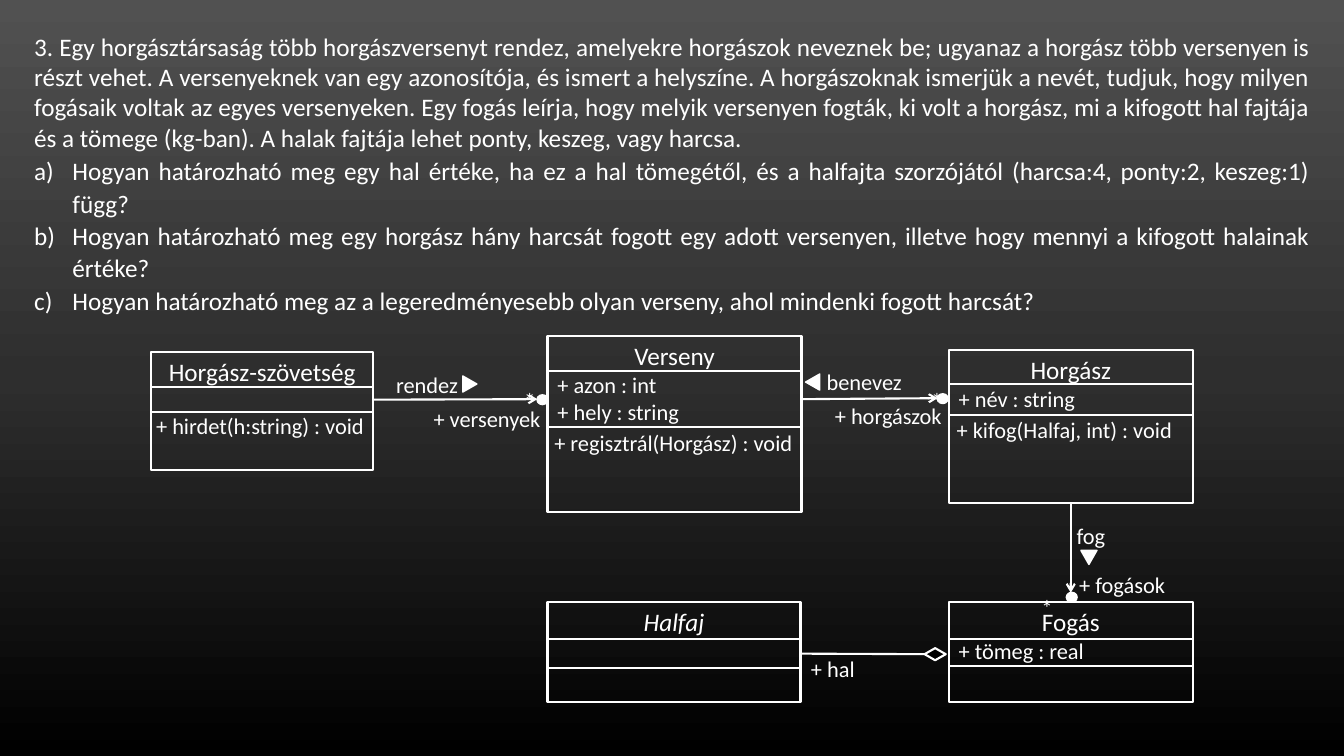
import copy

import pptx
import pptx.dml.color
import pptx.enum.shapes
import pptx.enum.text
import pptx.oxml.ns
import pptx.util
from pptx.util import Inches, Pt

WHITE, BLACK = "FFFFFF", "000000"
FONT = "Calibri"
BACKGROUND = [(0, "515151"), (0.5, "2E2E2E"), (1, BLACK)]

TASK = (
    "3. Egy horgásztársaság több horgászversenyt rendez, amelyekre horgászok neveznek be; "
    "ugyanaz a horgász több versenyen is részt vehet. A versenyeknek van egy azonosítója, és "
    "ismert a helyszíne. A horgászoknak ismerjük a nevét, tudjuk, hogy milyen fogásaik voltak "
    "az egyes versenyeken. Egy fogás leírja, hogy melyik versenyen fogták, ki volt a horgász, "
    "mi a kifogott hal fajtája és a tömege (kg-ban). A halak fajtája lehet ponty, keszeg, vagy "
    "harcsa."
)
QUESTIONS = [
    "Hogyan határozható meg egy hal értéke, ha ez a hal tömegétől, és a halfajta szorzójától "
    "(harcsa:4, ponty:2, keszeg:1) függ?",
    "Hogyan határozható meg egy horgász hány harcsát fogott egy adott versenyen, illetve hogy "
    "mennyi a kifogott halainak értéke?",
    "Hogyan határozható meg az a legeredményesebb olyan verseny, ahol mindenki fogott harcsát?",
]

# name: (left, top, width, height), (attribute top, attribute height), attributes
CLASSES = {
    "Horgász-szövetség": ((1.5, 3.49, 2.2, 1.17), (3.84, 0.25), []),
    "Verseny": ((5.43, 3.33, 2.52, 1.75), (3.68, 0.56), ["+ azon : int", "+ hely : string"]),
    "Horgász": ((9.41, 3.47, 2.42, 1.52), (3.81, 0.31), ["+ név : string"]),
    "Fogás": ((9.41, 5.97, 2.42, 0.99), (6.34, 0.27), ["+ tömeg : real"]),
    "Halfaj": ((5.43, 5.97, 2.51, 0.99), (6.34, 0.29), []),
}
ABSTRACT = {"Halfaj"}

# class, joined part (0 whole box, 1 attributes), side, end point, arrowhead
LINKS = [
    ("Horgász-szövetség", 1, 3, (5.33, 3.96), True),
    ("Verseny", 1, 3, (9.3, 3.95), True),
    ("Horgász", 0, 2, (10.62, 5.88), True),
    ("Halfaj", 1, 3, (9.17, 6.49), False),
]

# text, left, top, width
METHODS = [
    ("+ hirdet(h:string) : void", 1.45, 4.04, 2.29),
    ("+ regisztrál(Horgász) : void", 5.4, 4.21, 2.64),
    ("+ kifog(Halfaj, int) : void", 9.39, 4.08, 2.64),
    ("benevez", 8.1, 3.6, 0.99),
]
ROLES = [
    ("rendez", 3.74, 3.63, 0.99),
    ("fog", 10.52, 5.13, 0.6),
    ("+ versenyek", 4.19, 3.97, 1.28),
    ("+ horgászok", 8.17, 3.94, 1.28),
    ("+ fogások", 10.6, 5.62, 1.06),
    ("+ hal", 7.94, 6.45, 0.64),
]
STARS = [(5.09, 3.59), (9.13, 3.59), (10.22, 5.64)]
DOTS = [(5.33, 3.92), (9.3, 3.91), (10.58, 5.88)]
DIRECTIONS = [(4.58, 3.74, 90), (7.98, 3.72, 270), (10.72, 5.46, 180)]

SHAPES = pptx.enum.shapes.MSO_SHAPE
ALIGN = pptx.enum.text.PP_ALIGN
qn = pptx.oxml.ns.qn

deck = pptx.Presentation()
deck.slide_width, deck.slide_height = Inches(13.33), Inches(7.5)
slide = deck.slides.add_slide(deck.slide_layouts[6])


def rgb(value):
    return pptx.dml.color.RGBColor.from_string(value)


def add_element(parent, tag, **attributes):
    child = parent.makeelement(qn(tag), attributes)
    parent.append(child)
    return child


def write(paragraph, text, size, align, italic=None):
    run = paragraph.add_run()
    run.text = text
    run.font.color.rgb = rgb(WHITE)
    for key, value in {"name": FONT, "size": Pt(size), "italic": italic}.items():
        setattr(run.font, key, value)
    paragraph.alignment = align
    return run


def outline(kind, box, fill=None, weight=1.5):
    shape = slide.shapes.add_shape(kind, *map(Inches, box))
    shape.shadow.inherit = False
    if fill:
        shape.fill.solid()
        shape.fill.fore_color.rgb = rgb(fill)
    else:
        shape.fill.background()
    shape.line.color.rgb = rgb(WHITE)
    shape.line.width = Pt(weight)
    return shape


def label(text, box, size, align, wrap=True):
    frame = slide.shapes.add_textbox(*map(Inches, box)).text_frame
    frame.word_wrap = wrap
    frame.auto_size = pptx.enum.text.MSO_AUTO_SIZE.SHAPE_TO_FIT_TEXT
    return frame, write(frame.paragraphs[0], text, size, align)


def paint_background():
    fill = slide.background.fill
    fill.gradient()
    fill.gradient_angle = 270
    stops = slide.element.find(".//" + qn("a:gsLst"))
    stops.insert(1, copy.deepcopy(stops[0]))
    for stop, (position, color) in zip(fill.gradient_stops, BACKGROUND):
        stop.position = position
        stop.color.rgb = rgb(color)


def add_task():
    frame, _ = label(TASK, (0.24, 0.26, 12.85, 2.93), 18, ALIGN.JUSTIFY)
    frame.paragraphs[0].space_before = frame.paragraphs[0].space_after = Pt(1)
    for question in QUESTIONS:
        paragraph = frame.add_paragraph()
        write(paragraph, question, 18, ALIGN.JUSTIFY)
        paragraph.line_spacing = 1.07
        properties = paragraph._p.get_or_add_pPr()
        properties.set("marL", str(Inches(0.38)))
        properties.set("indent", str(-Inches(0.38)))
        add_element(properties, "a:buFont", typeface="+mj-lt")
        add_element(properties, "a:buAutoNum", type="alphaLcParenR")


def add_class(name, box, band, attributes):
    """Draw a class and return its box and its attribute compartment."""
    whole = outline(SHAPES.RECTANGLE, box)
    frame = whole.text_frame
    frame.vertical_anchor = pptx.enum.text.MSO_ANCHOR.TOP
    write(frame.paragraphs[0], name, 18, ALIGN.CENTER, name in ABSTRACT or None)
    for attribute in attributes:
        write(frame.add_paragraph(), attribute, 16, ALIGN.LEFT)
    left, _, width, _ = box
    top, height = band
    return whole, outline(SHAPES.RECTANGLE, (left, top, width, height))


def add_link(start, side, end, arrow):
    x, y = map(Inches, end)
    link = slide.shapes.add_connector(pptx.enum.shapes.MSO_CONNECTOR.STRAIGHT, x, y, x, y)
    link.begin_connect(start, side)
    link.line.color.rgb = rgb(WHITE)
    link.line.width = Pt(1.5)
    if arrow:
        add_element(link.line._get_or_add_ln(), "a:tailEnd", type="arrow")
    add_element(link._element.spPr, "a:effectLst")


paint_background()
add_task()
parts = {name: add_class(name, *details) for name, details in CLASSES.items()}
for name, part, side, end, arrow in LINKS:
    add_link(parts[name][part], side, end, arrow)
for left, top in DOTS:
    outline(SHAPES.OVAL, (left, top, 0.1, 0.09), WHITE)
for left, top, angle in DIRECTIONS:
    outline(SHAPES.ISOSCELES_TRIANGLE, (left, top, 0.16, 0.14), WHITE, 1).rotation = angle
outline(SHAPES.DIAMOND, (9.17, 6.43, 0.21, 0.12), BLACK)
for text, left, top, width in METHODS:
    label(text, (left, top, width, 0.37), 16, ALIGN.LEFT)
for text, left, top, width in ROLES:
    label(text, (left, top, width, 0.37), 16, ALIGN.CENTER, wrap=not text.startswith("+"))
for left, top in STARS:
    _, star = label("*", (left, top, 0.33, 0.42), 28, ALIGN.CENTER, wrap=False)
    star.font._element.set("baseline", "-10000")

deck.save("out.pptx")
